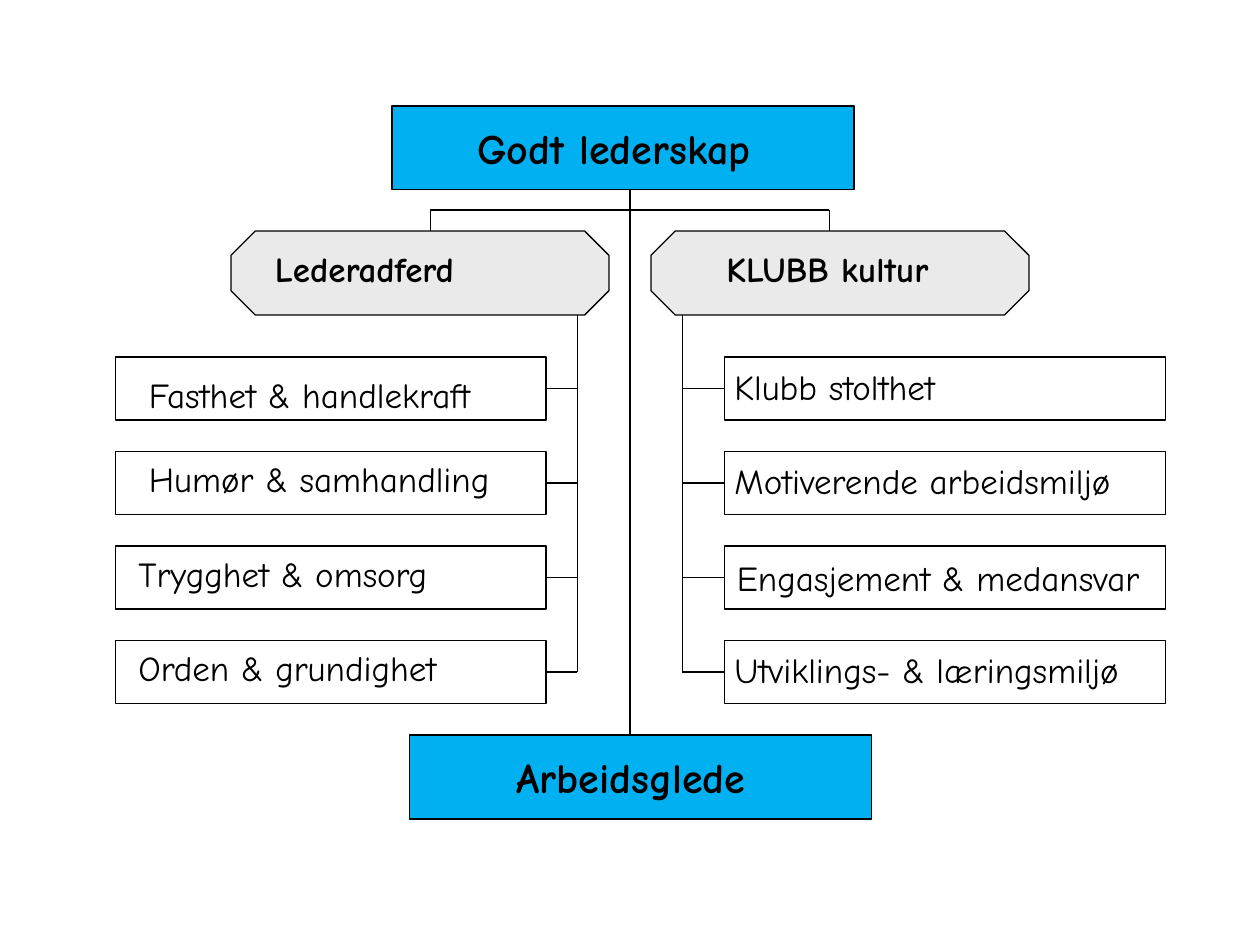
from lxml import etree
from pptx import Presentation
from pptx.dml.color import RGBColor
from pptx.enum.shapes import MSO_CONNECTOR, MSO_SHAPE
from pptx.enum.text import MSO_ANCHOR, PP_ALIGN
from pptx.oxml.ns import qn
from pptx.util import Pt

RECTANGLE = MSO_SHAPE.RECTANGLE
OCTAGON = MSO_SHAPE.OCTAGON
STRAIGHT = MSO_CONNECTOR.STRAIGHT
TOP, MIDDLE = MSO_ANCHOR.TOP, MSO_ANCHOR.MIDDLE
LEFT = PP_ALIGN.LEFT

FONT = "Comic Neue"
BLACK, BLUE, GREY = "000000", "00B0F0", "EAEAEA"
ROW_TOP, ROW_STEP, ROW_HEIGHT = 204, 54, 36


def color(value):
    return RGBColor.from_string(value)


def write(box, text, size, bold=False, anchor=TOP):
    frame = box.text_frame
    frame.word_wrap = True
    frame.vertical_anchor = anchor
    para = frame.paragraphs[0]
    para.alignment = LEFT
    span = para.add_run()
    span.text = text
    span.font.name = FONT
    span.font.size = Pt(size)
    span.font.bold = bold
    span.font.color.rgb = color(BLACK)


def add_box(page, left, top, width, height, fill=None, kind=RECTANGLE):
    box = page.shapes.add_shape(kind, Pt(left), Pt(top), Pt(width), Pt(height))
    box.shadow.inherit = False
    if fill:
        box.fill.solid()
        box.fill.fore_color.rgb = color(fill)
    else:
        box.fill.background()
    box.line.color.rgb = color(BLACK)
    box.line.width = Pt(0.75)
    return box


def add_label(page, text, left, top, width, height, size=20, bold=False):
    box = page.shapes.add_textbox(Pt(left), Pt(top), Pt(width), Pt(height))
    write(box, text, size, bold)
    return box


def add_line(page, x1, y1, x2, y2):
    line = page.shapes.add_connector(STRAIGHT, Pt(x1), Pt(y1), Pt(x2), Pt(y2))
    line.line.color.rgb = color(BLACK)
    line.line.width = Pt(0.75)
    etree.SubElement(line._element.spPr, qn("a:effectLst"))


def add_heading(page, text, octagon_left, text_left, text_width, stem):
    octagon = add_box(page, octagon_left, 132, 216, 48, GREY, OCTAGON)
    octagon.adjustments[0] = 0.29
    add_label(page, text, text_left, 138, text_width, 32, bold=True)
    add_line(page, stem, 132, stem, 120)


def add_branch(page, left, width, spine, edge, labels):
    add_line(page, spine, 180, spine, 384)
    for row, (text, text_left, offset, text_width) in enumerate(labels):
        top = ROW_TOP + row * ROW_STEP
        middle = top + ROW_HEIGHT / 2
        box = add_box(page, left, top, width, ROW_HEIGHT)
        add_line(page, spine, middle, edge, middle)
        if text_left is None:
            write(box, text, 20, anchor=MIDDLE)
        else:
            add_label(page, text, text_left, top + offset, text_width, 31)


def main():
    deck = Presentation()
    deck.slide_width, deck.slide_height = Pt(720), Pt(540)
    page = deck.slides.add_slide(deck.slide_layouts[6])

    add_heading(page, "Lederadferd", 132, 150, 136, 246)
    add_heading(page, "KLUBB kultur", 372, 408, 143, 474)
    add_line(page, 246, 120, 474, 120)

    add_box(page, 224, 60.5, 264, 48, BLUE)
    title = add_label(page, "Godt lederskap", 265.7, 66.2, 190.8, 36.7, 24, True)
    title.fill.solid()
    title.fill.fore_color.rgb = color(BLUE)

    add_line(page, 360, 108, 360, 420)
    add_box(page, 234, 420, 264, 48, BLUE)
    add_label(page, "Arbeidsglede", 288, 426, 165, 36.7, 24, True)

    add_branch(page, 66, 246, 330, 312, [
        ("Fasthet & handlekraft", 78, 6, 224),
        ("Humør & samhandling", 78, 0, 212),
        ("Trygghet & omsorg", 72, 0, 204),
        ("Orden & grundighet", 72, 0, 199),
    ])
    add_branch(page, 414, 252, 390, 414, [
        ("Klubb stolthet", 412.6, 1.2, 253.4),
        ("Motiverende arbeidsmiljø", 412.6, 1.2, 253.4),
        ("Engasjement & medansvar", None, 0, 0),
        ("Utviklings- & læringsmiljø", 412.6, 1.2, 255.6),
    ])
    deck.save("out.pptx")


if __name__ == "__main__":
    main()
